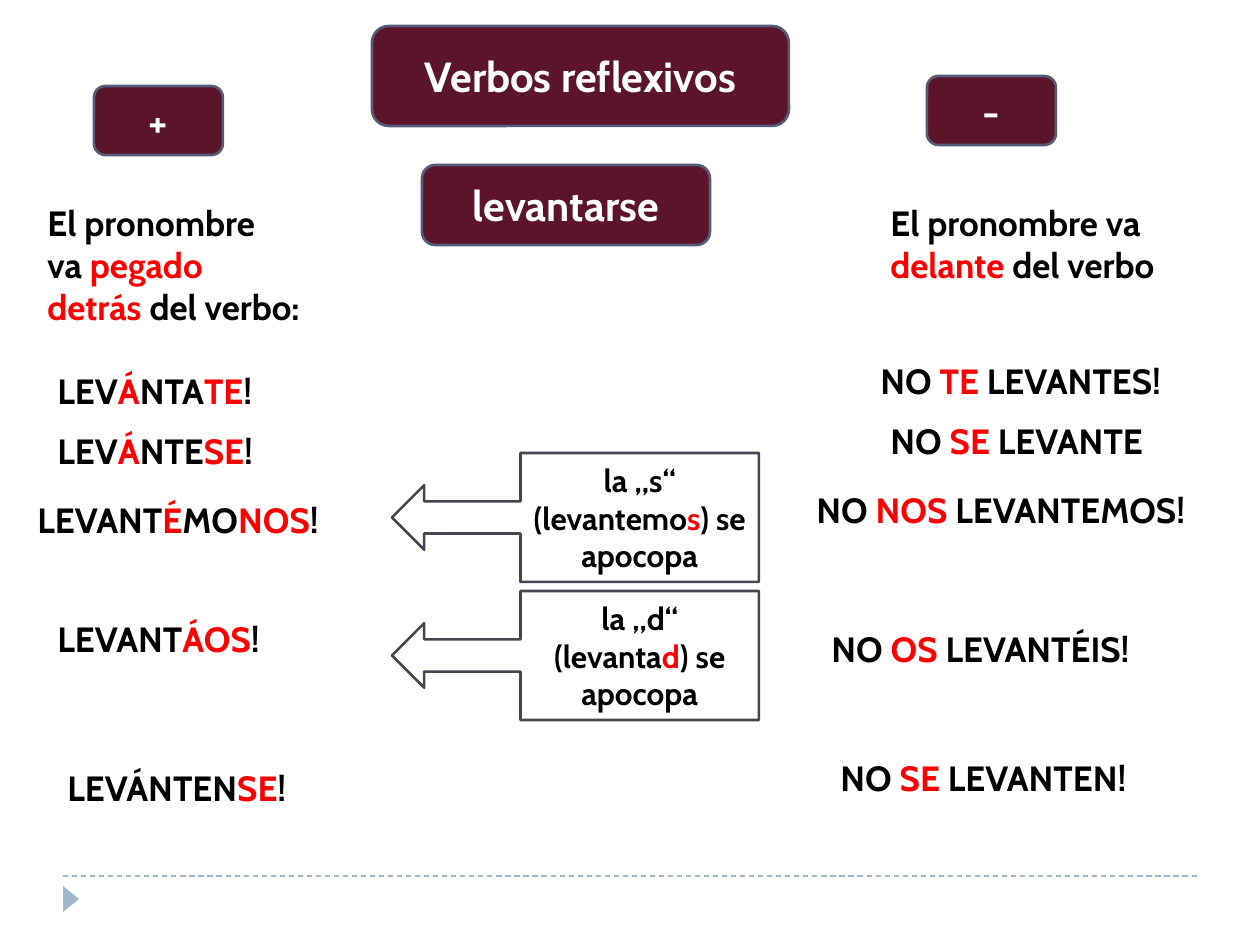
from lxml import etree
from pptx import Presentation
from pptx.dml.color import RGBColor
from pptx.enum.dml import MSO_LINE
from pptx.enum.shapes import MSO_CONNECTOR, MSO_SHAPE
from pptx.enum.text import MSO_ANCHOR, PP_ALIGN
from pptx.oxml.ns import qn
from pptx.util import Pt

PX = 914400 / 126
ROUNDED = MSO_SHAPE.ROUNDED_RECTANGLE
CALLOUT = MSO_SHAPE.LEFT_ARROW_CALLOUT
TRIANGLE = MSO_SHAPE.ISOSCELES_TRIANGLE
STRAIGHT = MSO_CONNECTOR.STRAIGHT
DASH = MSO_LINE.DASH
MIDDLE = MSO_ANCHOR.MIDDLE
CENTER = PP_ALIGN.CENTER

BLACK, WHITE, RED = "000000", "FFFFFF", "FF0000"
WINE, SLATE, DARK, PALE_BLUE = "5C142A", "545C79", "464653", "9FB8CD"


def rgb(value):
    return RGBColor.from_string(value)


def write(tf, text, size, color, align=None):
    """Fill a text frame; the parts between asterisks turn red."""
    tf.word_wrap = True
    for i, line in enumerate(text.split("\n")):
        p = tf.paragraphs[0] if i == 0 else tf.add_paragraph()
        p.alignment = align
        for j, part in enumerate(line.split("*")):
            if part:
                r = p.add_run()
                r.text = part
                r.font.name = "Cabin"
                r.font.size = Pt(size)
                r.font.bold = True
                r.font.color.rgb = rgb(RED if j % 2 else color)


prs = Presentation()
prs.slide_width = round(1260 * PX)
prs.slide_height = round(945 * PX)
s = prs.slides.add_slide(prs.slide_layouts[6])

# Footer line and marker
rule = s.shapes.add_connector(
    STRAIGHT, *(round(v * PX) for v in (63, 876, 1197, 876)))
rule.line.color.rgb = rgb(PALE_BLUE)
rule.line.width = Pt(0.75)
rule.line.dash_style = DASH
etree.SubElement(rule._element.spPr, qn("a:effectLst"))

marker = s.shapes.add_shape(
    TRIANGLE, *(round(v * PX) for v in (58, 891, 26, 16)))
marker.rotation = 90
marker.shadow.inherit = False
marker.fill.solid()
marker.fill.fore_color.rgb = rgb(PALE_BLUE)
marker.line.fill.background()

# Headings and callouts
heading = (ROUNDED, WINE, SLATE, 24, WHITE)
callout = (CALLOUT, WHITE, DARK, 18, BLACK)
boxes = [
    (heading, (372, 26, 417, 100), "Verbos reflexivos"),
    (heading, (422, 165, 288, 80), "levantarse"),
    (heading, (94, 86, 129, 69), "+"),
    (heading, (927, 76, 129, 69), "-"),
    (callout, (392, 453, 367, 129), "la „s“ (levantemo*s*) se apocopa"),
    (callout, (392, 591, 367, 129), "la „d“ (levanta*d*) se apocopa"),
]
for (kind, fill, line, size, color), place, text in boxes:
    sp = s.shapes.add_shape(kind, *(round(v * PX) for v in place))
    sp.shadow.inherit = False
    sp.fill.solid()
    sp.fill.fore_color.rgb = rgb(fill)
    sp.line.color.rgb = rgb(line)
    sp.line.width = Pt(1.5)
    sp.text_frame.vertical_anchor = MIDDLE
    write(sp.text_frame, text, size, color, CENTER)

# Rules and verb forms: left, top, width, height, text
forms = [
    (35, 195, 302, 140, "El pronombre\nva *pegado*\n*detrás *del verbo:"),
    (45, 363, 255, 55, "LEV*Á*NTA*TE*!"),
    (45, 423, 253, 55, "LEV*Á*NTE*SE*!"),
    (25, 492, 352, 55, "LEVANT*É*MO*NOS*!"),
    (45, 611, 668, 55, "LEVANT*ÁOS*!"),
    (55, 760, 284, 55, "LEVÁNTEN*SE*!"),
    (878, 195, 311, 97, "El pronombre va\n*delante *del verbo"),
    (868, 353, 352, 55, "NO *TE* LEVANTES!"),
    (878, 413, 321, 55, "NO *SE* LEVANTE"),
    (804, 482, 456, 55, "NO *NOS* LEVANTEMOS!"),
    (819, 621, 373, 55, "NO *OS* LEVANTÉIS!"),
    (828, 750, 362, 55, "NO *SE* LEVANTEN!"),
]
for *place, text in forms:
    sp = s.shapes.add_textbox(*(round(v * PX) for v in place))
    write(sp.text_frame, text, 20, BLACK)

prs.save("out.pptx")
